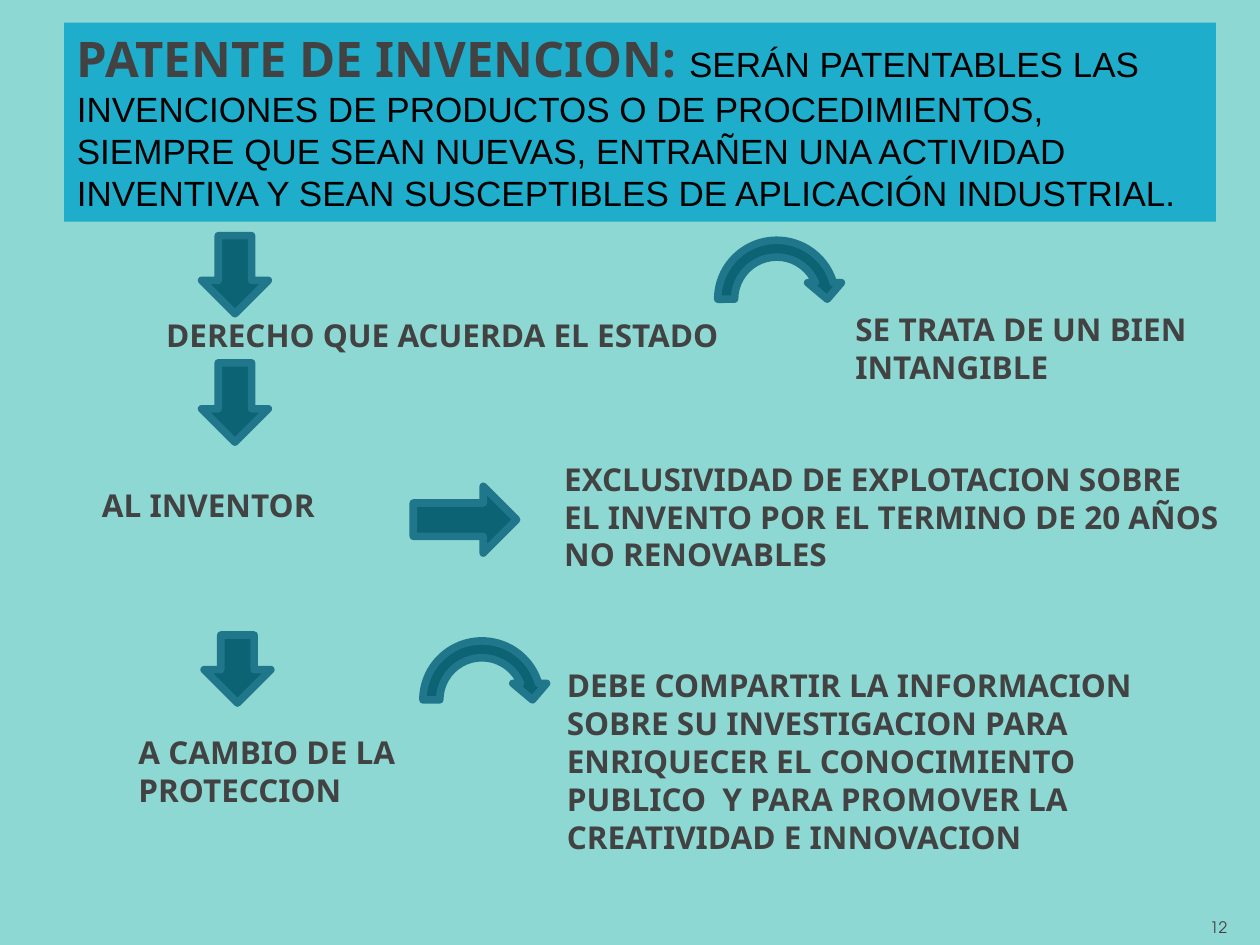
"""Build the slide that explains the invention patent."""
from typing import NamedTuple

from pptx import Presentation
from pptx.dml.color import RGBColor
from pptx.enum.shapes import MSO_SHAPE
from pptx.enum.text import MSO_ANCHOR, MSO_AUTO_SIZE, PP_ALIGN
from pptx.util import Inches, Pt

BACKGROUND, BANNER = "8DD8D3", "1FADCC"
ARROW_FILL, ARROW_EDGE = "0B6374", "20768B"
DARK, BLACK = "424242", "000000"


class Box(NamedTuple):
    left: float
    top: float
    width: float
    height: float


class Statement(NamedTuple):
    box: Box
    paragraphs: tuple[str, ...]


class Arrow(NamedTuple):
    preset: MSO_SHAPE
    box: Box


STATEMENTS = (
    Statement(Box(1.22, 2.46, 5.21, 0.4), ("DERECHO QUE ACUERDA EL ESTADO",)),
    Statement(Box(6.69, 2.41, 2.91, 0.71), ("SE TRATA DE UN BIEN INTANGIBLE",)),
    Statement(Box(0.71, 3.81, 2.31, 0.4), ("AL INVENTOR",)),
    Statement(Box(4.38, 3.6, 5.43, 1.01), (
        "EXCLUSIVIDAD DE EXPLOTACION SOBRE EL INVENTO POR EL TERMINO "
        "DE 20 AÑOS NO RENOVABLES",)),
    Statement(Box(1, 5.77, 2.31, 1.01), ("A CAMBIO DE LA", "PROTECCION")),
    Statement(Box(4.4, 5.24, 5.38, 1.92), (
        "DEBE COMPARTIR LA INFORMACION SOBRE SU INVESTIGACION PARA "
        "ENRIQUECER EL CONOCIMIENTO PUBLICO  Y PARA PROMOVER LA "
        "CREATIVIDAD E INNOVACION",)),
)

ARROWS = (
    Arrow(MSO_SHAPE.DOWN_ARROW, Box(1.6, 1.87, 0.53, 0.62)),
    Arrow(MSO_SHAPE.DOWN_ARROW, Box(1.6, 2.88, 0.53, 0.63)),
    Arrow(MSO_SHAPE.DOWN_ARROW, Box(1.62, 5.04, 0.53, 0.54)),
    Arrow(MSO_SHAPE.RIGHT_ARROW, Box(3.28, 3.86, 0.82, 0.53)),
    Arrow(MSO_SHAPE.CIRCULAR_ARROW, Box(5.63, 1.84, 1.07, 1.07)),
    Arrow(MSO_SHAPE.CIRCULAR_ARROW, Box(3.29, 5.02, 1.07, 1.07)),
)


def inches(box: Box) -> list[int]:
    """Return the box as lengths."""
    return [Inches(value) for value in box]


def paint(color_format, color: str) -> None:
    """Give a colour format the hex colour."""
    color_format.rgb = RGBColor.from_string(color)


def paint_fill(fill, color: str) -> None:
    """Make a fill solid in the hex colour."""
    fill.solid()
    paint(fill.fore_color, color)


def write(paragraph, text: str, *, size: float = 18, font: str = "Noto Sans",
          color: str = DARK, bold: bool = True, align=PP_ALIGN.LEFT) -> None:
    """Add a formatted run to the paragraph."""
    paragraph.alignment = align
    run = paragraph.add_run()
    run.text = text
    run.font.size, run.font.name, run.font.bold = Pt(size), font, bold
    paint(run.font.color, color)


def add_text_frame(slide, box: Box):
    """Add a wrapping text box and return its frame."""
    frame = slide.shapes.add_textbox(*inches(box)).text_frame
    frame.word_wrap = True
    return frame


def add_statement(slide, statement: Statement) -> None:
    """Draw one statement of the scheme."""
    frame = add_text_frame(slide, statement.box)
    for index, text in enumerate(statement.paragraphs):
        write(frame.add_paragraph() if index else frame.paragraphs[0], text)


def add_arrow(slide, arrow: Arrow) -> None:
    """Draw one arrow of the scheme."""
    shape = slide.shapes.add_shape(arrow.preset, *inches(arrow.box))
    shape.shadow.inherit = False
    paint_fill(shape.fill, ARROW_FILL)
    paint_fill(shape.line.fill, ARROW_EDGE)
    shape.line.width = Pt(4.33)


def add_definition(slide) -> None:
    """Turn the title into the banner with the definition."""
    title = slide.shapes.title
    title.left, title.top, title.width, title.height = inches(
        Box(0.51, 0.18, 9.14, 1.58))
    paint_fill(title.fill, BANNER)
    frame = title.text_frame
    frame.word_wrap = True
    frame.auto_size = MSO_AUTO_SIZE.NONE
    frame.vertical_anchor = MSO_ANCHOR.TOP
    definition = frame.paragraphs[0]
    write(definition, "PATENTE DE INVENCION: ", size=28)
    write(definition,
          "SERÁN PATENTABLES LAS INVENCIONES DE PRODUCTOS O DE "
          "PROCEDIMIENTOS, SIEMPRE QUE SEAN NUEVAS, ENTRAÑEN UNA ACTIVIDAD "
          "INVENTIVA Y SEAN SUSCEPTIBLES DE APLICACIÓN INDUSTRIAL.",
          size=20, font="Arial", color=BLACK, bold=False)


def add_page_number(slide) -> None:
    """Write the page number in the lower right corner."""
    frame = add_text_frame(slide, Box(9.24, 6.91, 0.6, 0.57))
    frame.vertical_anchor = MSO_ANCHOR.BOTTOM
    write(frame.paragraphs[0], "12", size=9, font="TeX Gyre Adventor",
          bold=False, align=PP_ALIGN.RIGHT)


def main() -> None:
    """Build and save the presentation."""
    presentation = Presentation()
    presentation.slide_width, presentation.slide_height = Inches(10), Inches(7.5)
    slide = presentation.slides.add_slide(presentation.slide_layouts[5])
    paint_fill(slide.background.fill, BACKGROUND)
    add_definition(slide)
    for statement in STATEMENTS:
        add_statement(slide, statement)
    for arrow in ARROWS:
        add_arrow(slide, arrow)
    add_page_number(slide)
    presentation.save("out.pptx")


if __name__ == "__main__":
    main()
